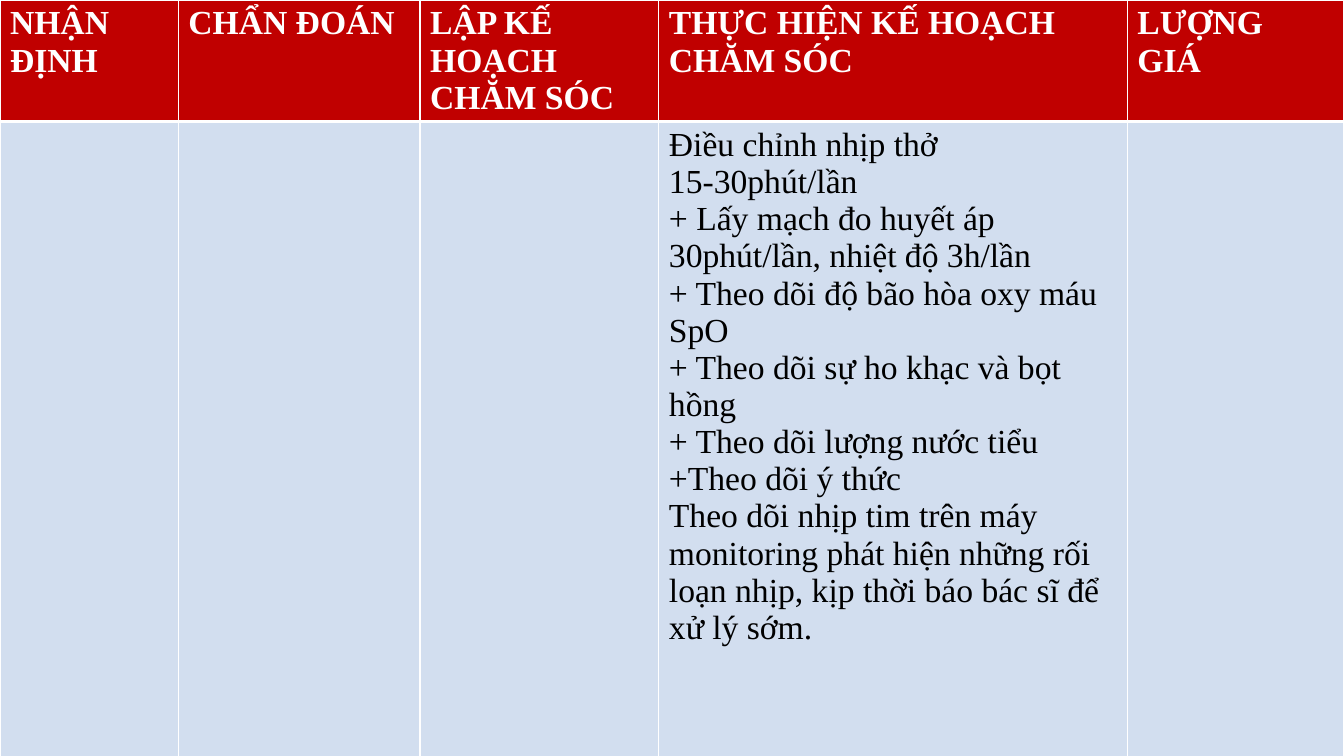
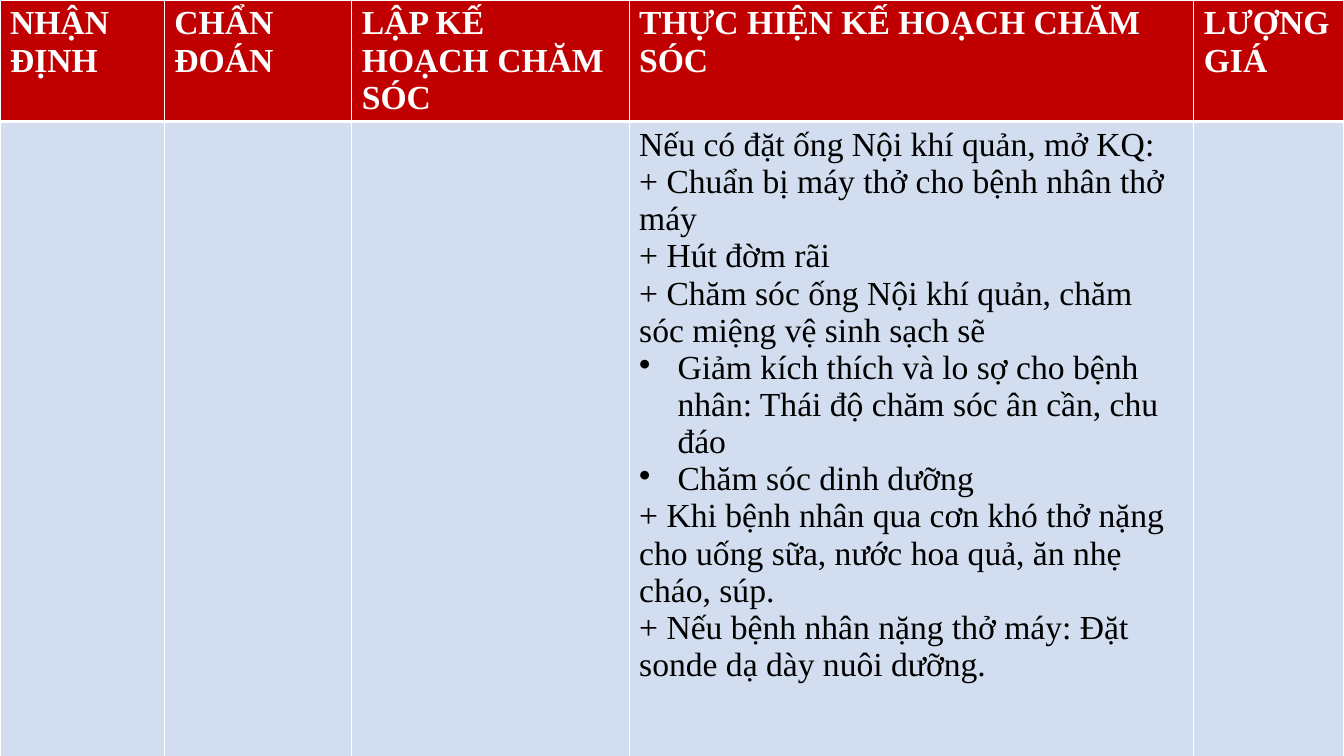
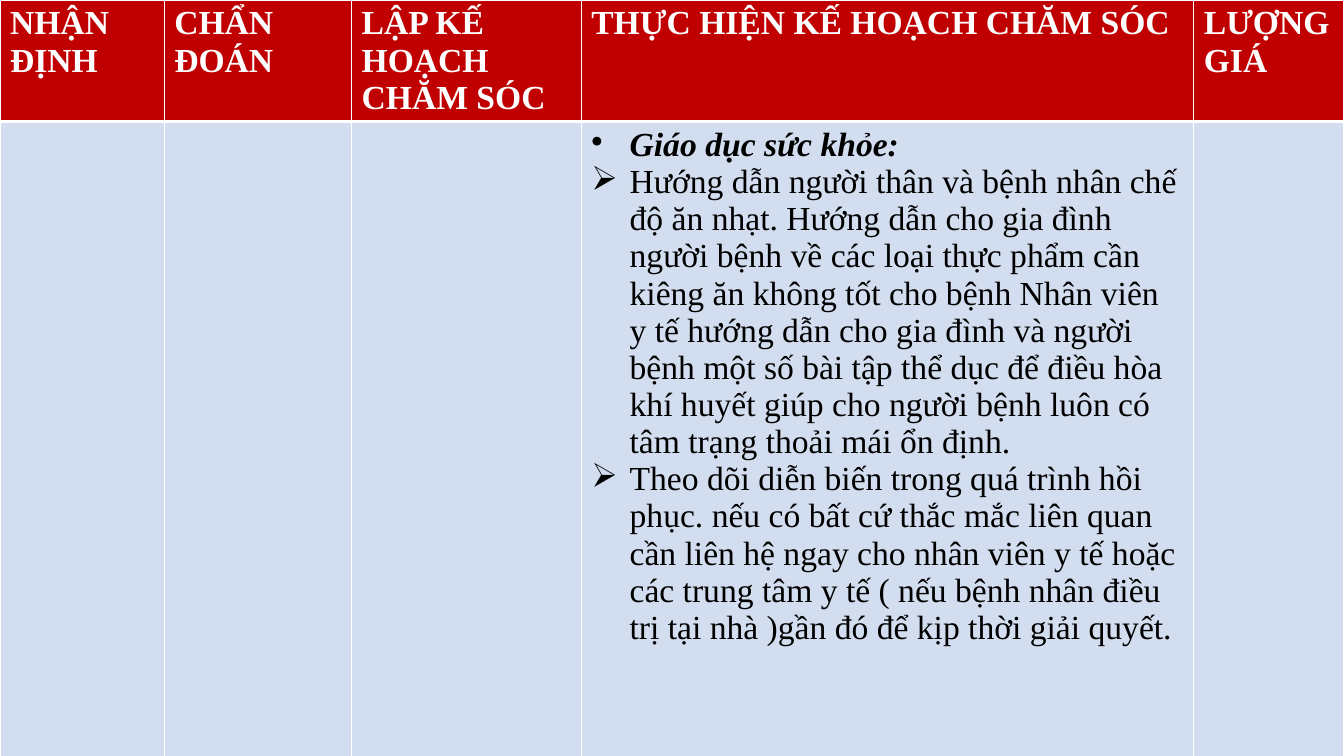
from dataclasses import dataclass

from lxml.etree import SubElement
from pptx import Presentation
from pptx.dml.color import RGBColor
from pptx.oxml.ns import qn
from pptx.util import Inches, Pt


@dataclass(frozen=True)
class Theme:
    font: str = "Times New Roman"
    text_size: int = 24
    header_fill: str = "C00000"
    header_text: str = "FFFFFF"
    body_fill: str = "D2DEEF"
    body_text: str = "000000"
    border: str = "FFFFFF"
    thin: int = 1
    thick: int = 3
    bullet_indent: float = 0.38


@dataclass(frozen=True)
class Item:
    text: str
    bullet: str = ""
    emphasis: bool = False


THEME = Theme()
HEADINGS = ["NHẬN ĐỊNH", "CHẨN ĐOÁN", "LẬP KẾ HOẠCH CHĂM SÓC",
            "THỰC HIỆN KẾ HOẠCH CHĂM SÓC", "LƯỢNG GIÁ"]
CARE_COLUMN = 3
ROW_WEIGHTS = [1.09, 6.41]

# Each slide: relative column widths and the care steps
CARE_SLIDES = [
    ([1.77, 2.4, 2.37, 4.65, 2.15], [
        Item("Điều chỉnh nhịp thở 15-30phút/lần"),
        Item("+ Lấy mạch đo huyết áp 30phút/lần, nhiệt độ 3h/lần"),
        Item("+ Theo dõi độ bão hòa oxy máu SpO"),
        Item("+ Theo dõi sự ho khạc và bọt hồng"),
        Item("+ Theo dõi lượng nước tiểu"),
        Item("+Theo dõi ý thức"),
        Item("Theo dõi nhịp tim trên máy monitoring phát hiện những rối "
             "loạn nhịp, kịp thời báo bác sĩ để xử lý sớm."),
    ]),
    ([1.63, 1.86, 2.75, 5.6, 1.49], [
        Item("Nếu có đặt ống Nội khí quản, mở KQ:"),
        Item("+ Chuẩn bị máy thở cho bệnh nhân thở máy"),
        Item("+ Hút đờm rãi"),
        Item("+ Chăm sóc ống Nội khí quản, chăm sóc miệng vệ sinh sạch sẽ"),
        Item("Giảm kích thích và lo sợ cho bệnh nhân: Thái độ chăm sóc "
             "ân cần, chu đáo", "•"),
        Item("Chăm sóc dinh dưỡng", "•"),
        Item("+ Khi bệnh nhân qua cơn khó thở nặng cho uống sữa, nước hoa "
             "quả, ăn nhẹ cháo, súp."),
        Item("+ Nếu bệnh nhân nặng thở máy: Đặt sonde dạ dày nuôi dưỡng."),
    ]),
    ([1.63, 1.86, 2.28, 6.08, 1.49], [
        Item("Giáo dục sức khỏe:", "•", emphasis=True),
        Item("Hướng dẫn người thân và bệnh nhân chế độ ăn nhạt. Hướng dẫn "
             "cho gia đình người bệnh về các loại thực phẩm cần kiêng ăn "
             "không tốt cho bệnh Nhân viên y tế hướng dẫn cho gia đình và "
             "người bệnh một số bài tập thể dục để điều hòa khí huyết giúp "
             "cho người bệnh luôn có tâm trạng thoải mái ổn định.", "➢"),
        Item("Theo dõi diễn biến trong quá trình hồi phục. nếu có bất cứ "
             "thắc mắc liên quan cần liên hệ ngay cho nhân viên y tế hoặc "
             "các trung tâm y tế ( nếu bệnh nhân điều trị tại nhà )gần đó "
             "để kịp thời giải quyết.", "➢"),
    ]),
]


def share(total, weights):
    return [int(total * weight / sum(weights)) for weight in weights]


def style_cell(cell, fill, top, bottom):
    """Draw the four borders, then the fill."""
    properties = cell._tc.get_or_add_tcPr()
    widths = {"L": THEME.thin, "R": THEME.thin, "T": top, "B": bottom}
    for side, width in widths.items():
        line = SubElement(properties, qn(f"a:ln{side}"), w=str(Pt(width)))
        SubElement(SubElement(line, qn("a:solidFill")),
                   qn("a:srgbClr"), val=THEME.border)
    cell.fill.solid()
    cell.fill.fore_color.rgb = RGBColor.from_string(fill)


def add_run(paragraph, text, color, bold=False, italic=False):
    run = paragraph.add_run()
    run.text = text
    font = run.font
    font.name, font.size = THEME.font, Pt(THEME.text_size)
    font.bold, font.italic = bold, italic
    font.color.rgb = RGBColor.from_string(color)


def set_bullet(paragraph, character):
    properties = paragraph._p.get_or_add_pPr()
    indent = Inches(THEME.bullet_indent)
    properties.set("marL", str(indent))
    properties.set("indent", str(-indent))
    SubElement(properties, qn("a:buChar"), char=character)


def fill_care_cell(cell, items):
    frame = cell.text_frame
    for index, item in enumerate(items):
        paragraph = frame.add_paragraph() if index else frame.paragraphs[0]
        if item.bullet:
            set_bullet(paragraph, item.bullet)
        add_run(paragraph, item.text, THEME.body_text,
                bold=item.emphasis, italic=item.emphasis)


def add_care_table(slide, box, column_weights, items):
    left, top, width, height = box
    table = slide.shapes.add_table(len(ROW_WEIGHTS), len(HEADINGS),
                                   left, top, width, height).table
    table.horz_banding = False
    for column, size in zip(table.columns, share(width, column_weights)):
        column.width = size
    for row, size in zip(table.rows, share(height, ROW_WEIGHTS)):
        row.height = size

    # Header row above the body row
    for index, heading in enumerate(HEADINGS):
        header, body = table.cell(0, index), table.cell(1, index)
        style_cell(header, THEME.header_fill, THEME.thin, THEME.thick)
        style_cell(body, THEME.body_fill, THEME.thick, THEME.thin)
        add_run(header.text_frame.paragraphs[0], heading,
                THEME.header_text, bold=True)
    fill_care_cell(table.cell(1, CARE_COLUMN), items)


def main():
    presentation = Presentation()
    presentation.slide_width = Inches(13.33)
    presentation.slide_height = Inches(7.5)
    blank_layout = presentation.slide_layouts[6]
    box = (0, 0, presentation.slide_width, presentation.slide_height)
    for column_weights, items in CARE_SLIDES:
        slide = presentation.slides.add_slide(blank_layout)
        add_care_table(slide, box, column_weights, items)
    presentation.save("out.pptx")


if __name__ == "__main__":
    main()
